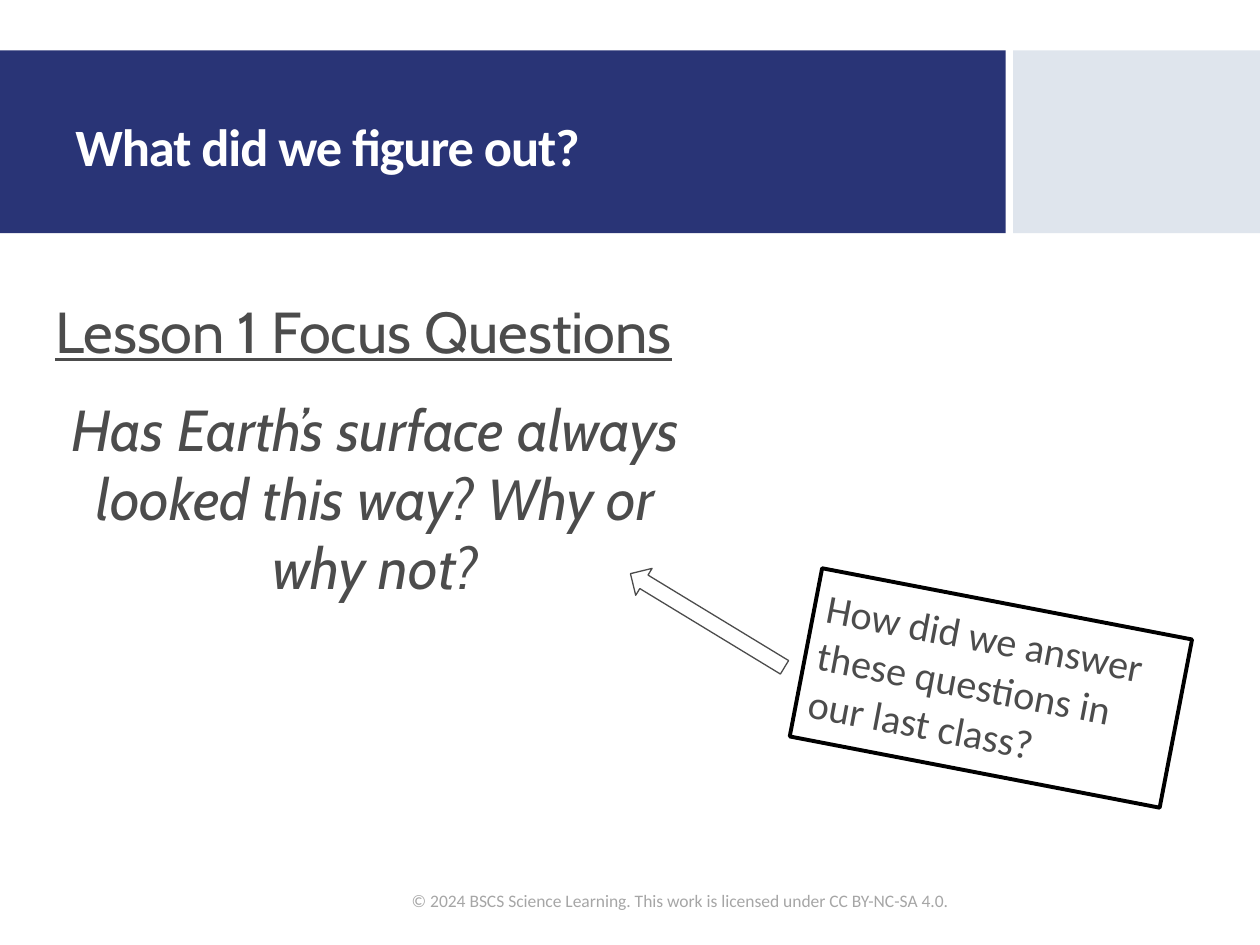
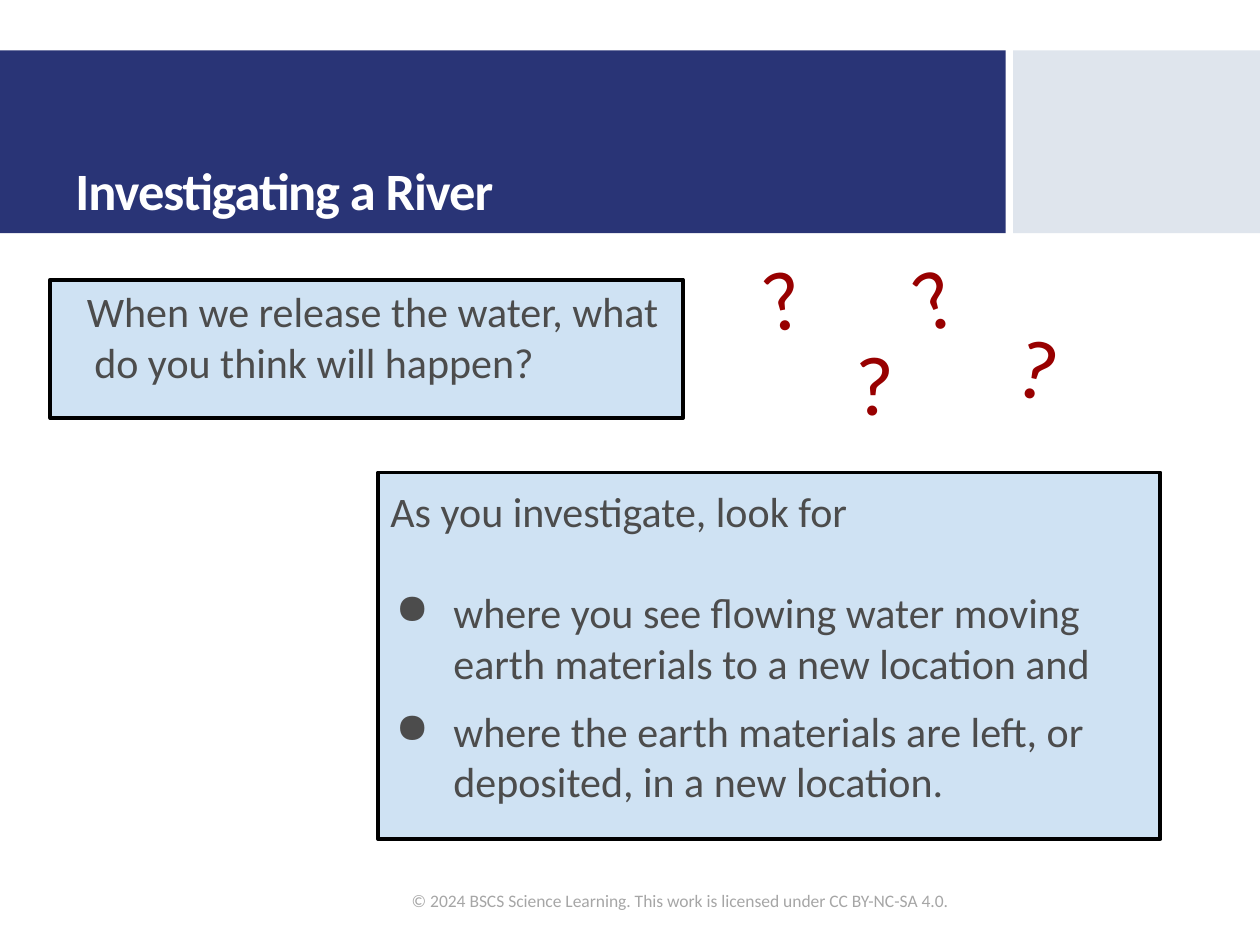
from lxml import etree
from pptx import Presentation
from pptx.dml.color import RGBColor
from pptx.enum import shapes, text
from pptx.oxml.ns import qn
from pptx.util import Pt

# Content: paragraphs are dicts of text plus whatever departs from the defaults
TITLE_FIGURE = "What did we figure out?"
TITLE_RIVER = "Investigating a River"
FOOTER = "© 2024 BSCS Science Learning. This work is licensed under CC BY-NC-SA 4.0."
FOCUS = [
    dict(text="Lesson 1 Focus Questions", underline=True),
    dict(text="Has Earth’s surface always looked this way? Why or why not?",
         italic=True, align=text.PP_ALIGN.CENTER, before=16),
]
CALLOUT = [dict(text="How did we answer these questions in our last class?")]
PREDICTION = [dict(text="When we release the water, what do you think will happen?",
                   margin=18, indent=-4.3)]
LOOK_FOR = [
    dict(text="As you investigate, look for"),
    dict(text="where you see flowing water moving earth materials to a new location and",
         bullet="●", margin=36, indent=-33, before=29.3),
    dict(text="where the earth materials are left, or deposited, in a new location.",
         bullet="●", margin=36, indent=-33, before=10),
]
# Question marks: left, top, rotation
QUESTION_MARKS = [(514.8, 132.5, -20.8), (428.4, 133.2, -11.5),
                  (481.7, 182.2, 0), (575.3, 173.5, 12.5)]

# Shared look
NAVY = RGBColor(0x29, 0x34, 0x76)
MIST = RGBColor(0xDF, 0xE5, 0xED)
SKY = RGBColor(0xCF, 0xE2, 0xF3)
WHITE = RGBColor(0xFF, 0xFF, 0xFF)
BLACK = RGBColor(0, 0, 0)
INK = RGBColor(0x4C, 0x4C, 0x4C)
GREY = RGBColor(0xA6, 0xA6, 0xA6)
RED = RGBColor(0x98, 0, 0)
BODY_FONT, FOCUS_FONT = "Calibri", "Cabin"
SLIDE_W, SLIDE_H = 720, 540
BAND_TOP, BAND_H, BAND_W, BAND_GAP = 28.8, 104.4, 574.6, 4.3
TOP, MIDDLE, BOTTOM = (text.MSO_ANCHOR.TOP, text.MSO_ANCHOR.MIDDLE,
                       text.MSO_ANCHOR.BOTTOM)


def write(sp, paragraphs, size, color=INK, font=BODY_FONT, pad=7.2, anchor=TOP):
    tf = sp.text_frame
    tf.word_wrap = True
    tf.vertical_anchor = anchor
    tf.margin_left = tf.margin_right = Pt(7.2)
    tf.margin_top = tf.margin_bottom = Pt(pad)
    for i, item in enumerate(paragraphs):
        p = tf.paragraphs[0] if i == 0 else tf.add_paragraph()
        p.text = item["text"]
        p.alignment = item.get("align", text.PP_ALIGN.LEFT)
        p.line_spacing = item.get("spacing")
        if "before" in item:
            p.space_before = Pt(item["before"])
        p_pr = p._p.get_or_add_pPr()
        if "margin" in item:
            p_pr.set("marL", str(Pt(item["margin"])))
            p_pr.set("indent", str(Pt(item["indent"])))
        if "bullet" in item:
            etree.SubElement(p_pr, qn("a:buChar")).set("char", item["bullet"])
        r = p.runs[0]
        r.font.name, r.font.size, r.font.color.rgb = font, Pt(size), color
        r.font.bold = item.get("bold")
        r.font.italic = item.get("italic")
        r.font.underline = item.get("underline")
        if "tracking" in item:
            r._r.get_or_add_rPr().set("spc", str(item["tracking"]))


def add_text(slide, box, paragraphs, size, rotation=0, **style):
    sp = slide.shapes.add_textbox(*map(Pt, box))
    sp.rotation = rotation
    write(sp, paragraphs, size, **style)


def add_block(slide, box, fill=None, line=None, width=2.25, rotation=0,
              kind=shapes.MSO_SHAPE.RECTANGLE):
    sp = slide.shapes.add_shape(kind, *map(Pt, box))
    sp.shadow.inherit = False
    sp.rotation = rotation
    if fill is None:
        sp.fill.background()
    else:
        sp.fill.solid()
        sp.fill.fore_color.rgb = fill
    if line is None:
        sp.line.fill.background()
    else:
        sp.line.color.rgb = line
        sp.line.width = Pt(width)
        etree.SubElement(sp.line._get_or_add_ln(), qn("a:round"))
    return sp


def add_slide(prs, title, anchor, spacing=None):
    slide = prs.slides.add_slide(prs.slide_layouts[6])
    # Bands, title and footer
    side = BAND_W + BAND_GAP
    add_block(slide, (0, BAND_TOP, BAND_W, BAND_H), NAVY)
    add_block(slide, (side, BAND_TOP, SLIDE_W - side, BAND_H), MIST)
    heading = dict(text=title, bold=True, tracking=-60, spacing=spacing)
    add_text(slide, (36, 41.8, 499, 87.8), [heading], 30,
             color=WHITE, pad=3.6, anchor=anchor)
    add_text(slide, (228.2, 500.4, 349.2, 28.8), [dict(text=FOOTER)], 10,
             color=GREY, pad=3.6, anchor=MIDDLE)
    return slide


def main():
    prs = Presentation()
    prs.slide_width, prs.slide_height = Pt(SLIDE_W), Pt(SLIDE_H)

    # Focus questions with a tilted callout
    slide = add_slide(prs, TITLE_FIGURE, MIDDLE, spacing=0.9)
    add_text(slide, (24.5, 162, 380.2, 190), FOCUS, 33, font=FOCUS_FONT)
    callout = add_block(slide, (458.6, 344.2, 215.3, 97.9), line=BLACK, rotation=10.9)
    write(callout, CALLOUT, 23)
    add_block(slide, (352.8, 345.6, 103, 18), WHITE, INK, 0.75, 31.3,
              shapes.MSO_SHAPE.LEFT_ARROW)

    # River investigation
    slide = add_slide(prs, TITLE_RIVER, BOTTOM)
    prediction = add_block(slide, (28.8, 159.8, 361.4, 79.2), SKY, BLACK)
    write(prediction, PREDICTION, 24, pad=3.6)
    look_for = add_block(slide, (216, 270, 447.1, 209.5), SKY, BLACK)
    write(look_for, LOOK_FOR, 24)
    for left, top, rotation in QUESTION_MARKS:
        add_text(slide, (left, top, 40.3, 72.7), [dict(text="?")], 48,
                 rotation, color=RED)

    prs.save("out.pptx")


if __name__ == "__main__":
    main()
